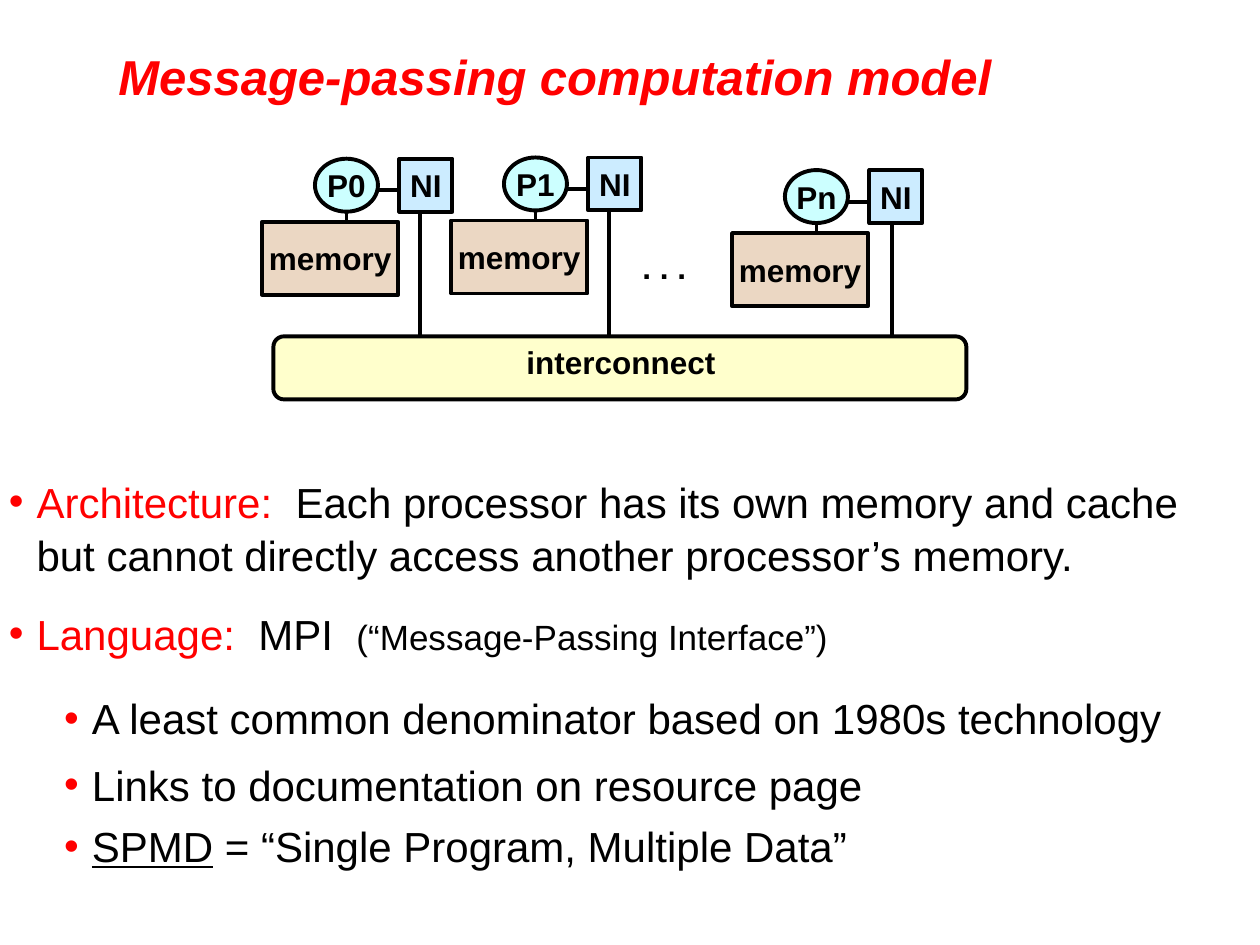
"""Build the message-passing computation model slide."""
import dataclasses

import lxml.etree
import pptx
import pptx.dml.color
import pptx.enum.shapes
import pptx.enum.text
import pptx.oxml.ns
import pptx.util

Inches = pptx.util.Inches
Pt = pptx.util.Pt
RGB = pptx.dml.color.RGBColor.from_string
SHAPE = pptx.enum.shapes.MSO_SHAPE
ALIGN = pptx.enum.text.PP_ALIGN
ANCHOR = pptx.enum.text.MSO_ANCHOR
qn = pptx.oxml.ns.qn


@dataclasses.dataclass(frozen=True)
class Theme:
    font: str = "Arial"
    accent: str = "FF0000"
    ink: str = "000000"
    processor: str = "CCFFFF"
    memory: str = "EBD7C3"
    interface: str = "CCECFF"
    bus: str = "FFFFCC"
    title: int = 28
    body: int = 24
    note: int = 20
    label: int = 18
    line: float = 2.25


def add_run(p, text, *, font, size, color, bold=False, italic=False, underline=False):
    r = p.add_run()
    r.text = text
    f = r.font
    f.name, f.size, f.bold, f.italic, f.underline = font, Pt(size), bold, italic, underline
    f.color.rgb = RGB(color)


def place(s, x, y, w, h):
    s.left, s.top, s.width, s.height = (Inches(v) for v in (x, y, w, h))


class Diagram:
    def __init__(self, slide, theme):
        self.slide = slide
        self.theme = theme

    def run(self, p, text, **fmt):
        t = self.theme
        add_run(p, text, **{"font": t.font, "size": t.body, "color": t.ink, **fmt})

    def frame(self, sp, top=0.03):
        tf = sp.text_frame
        tf.auto_size = pptx.enum.text.MSO_AUTO_SIZE.NONE
        tf.margin_left = tf.margin_right = Inches(0.07)
        tf.margin_top, tf.margin_bottom = Inches(top), Inches(0.03)
        return tf

    def title(self, text, *box):
        sp = self.slide.shapes.title
        place(sp, *box)
        tf = self.frame(sp)
        tf.word_wrap = False
        p = tf.paragraphs[0]
        p.alignment = ALIGN.LEFT
        self.run(p, text, size=self.theme.title, color=self.theme.accent, bold=True, italic=True)

    def bullets(self, items, *box):
        sp = self.slide.placeholders[1]
        place(sp, *box)
        tf = self.frame(sp, top=0.51)
        for i, (level, before, after, runs) in enumerate(items):
            p = tf.paragraphs[0] if i == 0 else tf.add_paragraph()
            p.level = level
            p.line_spacing = 1.05
            p.space_before, p.space_after = Pt(before), Pt(after)
            self.bullet(p, 0.66 if level else 0.22)
            for text, fmt in runs:
                self.run(p, text, **fmt)

    def bullet(self, p, indent):
        pPr = p._p.get_or_add_pPr()
        pPr.set("marL", str(Inches(indent)))
        pPr.set("indent", str(Inches(-0.22)))
        clr = lxml.etree.SubElement(pPr, qn("a:buClr"))
        lxml.etree.SubElement(clr, qn("a:srgbClr"), val=self.theme.accent)
        lxml.etree.SubElement(pPr, qn("a:buFont"), typeface=self.theme.font)
        lxml.etree.SubElement(pPr, qn("a:buChar"), char="•")

    def box(self, kind, fill, text, *box):
        sp = self.slide.shapes.add_shape(kind, *(Inches(v) for v in box))
        sp.shadow.inherit = False
        sp.fill.solid()
        sp.fill.fore_color.rgb = RGB(fill)
        sp.line.color.rgb = RGB(self.theme.ink)
        sp.line.width = Pt(self.theme.line)
        if text:
            tf = sp.text_frame
            tf.word_wrap = False
            tf.vertical_anchor = ANCHOR.MIDDLE
            p = tf.paragraphs[0]
            p.alignment = ALIGN.CENTER
            self.run(p, text, size=self.theme.label, bold=True)

    def label(self, text, *box):
        tf = self.slide.shapes.add_textbox(*(Inches(v) for v in box)).text_frame
        tf.word_wrap = True
        self.run(tf.paragraphs[0], text, size=self.theme.label, bold=True)

    def line(self, *ends):
        s = self.slide.shapes.add_connector(
            pptx.enum.shapes.MSO_CONNECTOR.STRAIGHT, *(Inches(v) for v in ends))
        s.line.color.rgb = RGB(self.theme.ink)
        s.line.width = Pt(self.theme.line)
        lxml.etree.SubElement(s._element.spPr, qn("a:effectLst"))

    def node(self, name, x, y, drop_x, bus_y):
        t = self.theme
        self.box(SHAPE.OVAL, t.processor, name, x + 0.42, y, 0.5, 0.42)
        self.box(SHAPE.RECTANGLE, t.memory, "memory", x, y + 0.5, 1.08, 0.58)
        self.box(SHAPE.RECTANGLE, t.interface, "NI", x + 1.09, y, 0.42, 0.42)
        self.line(x + 0.67, y + 0.42, x + 0.67, y + 0.5)
        self.line(x + 0.92, y + 0.25, x + 1.09, y + 0.25)
        self.line(drop_x, y + 0.42, drop_x, bus_y)


def main():
    prs = pptx.Presentation()
    prs.slide_width, prs.slide_height = Inches(10), Inches(7.5)
    theme = Theme()
    d = Diagram(prs.slides.add_slide(prs.slide_layouts[1]), theme)

    d.title("Message-passing computation model", 0.87, 0.34, 7.24, 0.53)
    red = {"color": theme.accent}
    d.bullets([
        (0, 0, 0, [("Architecture:  ", red),
                   ("Each processor has its own memory and cache but cannot "
                    "directly access another processor’s memory.", {})]),
        (0, 15, 3, [("Language:  ", red), ("MPI  ", {}),
                    ("(“Message-Passing Interface”)", {"size": theme.note})]),
        (1, 15, 3, [("A least common denominator based on 1980s technology", {})]),
        (1, 4.8, 0, [("Links to documentation on resource page", {})]),
        (1, 4.8, 0, [("SPMD", {"underline": True}),
                     (" = “Single Program, Multiple Data”", {})]),
    ], 0, 3.25, 9.83, 4.28)

    bus_y = 2.67
    d.box(SHAPE.ROUNDED_RECTANGLE, theme.bus, "", 2.17, bus_y, 5.5, 0.5)
    d.label("interconnect", 4.08, bus_y, 1.75, 0.4)
    d.label(". . .", 5, 1.92, 0.75, 0.4)
    for name, x, y, drop_x in (("P0", 2.08, 1.26, 3.33),
                               ("P1", 3.58, 1.25, 4.83),
                               ("Pn", 5.81, 1.35, 7.08)):
        d.node(name, x, y, drop_x, bus_y)

    prs.save("out.pptx")


if __name__ == "__main__":
    main()
